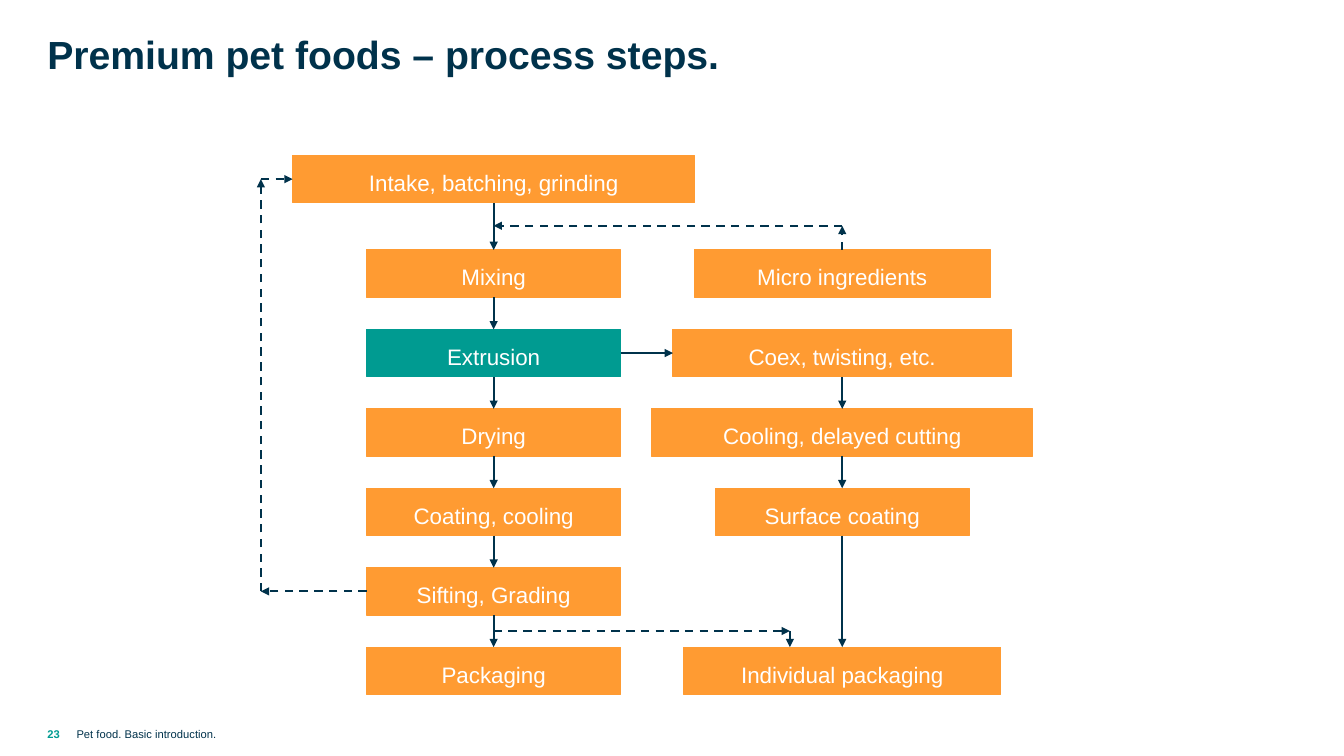
from dataclasses import dataclass
from itertools import pairwise

import pptx
import pptx.dml.color
import pptx.enum.dml
import pptx.enum.shapes
import pptx.enum.text
import pptx.oxml.ns
import pptx.util
from lxml import etree
from pptx.shapes.autoshape import Shape
from pptx.shapes.connector import Connector
from pptx.slide import Slide

COLORS = {"navy": "00324B", "teal": "009B91", "orange": "FF9B32", "white": "FFFFFF"}
FONT = "Arial"

# Grid, in inches: two column centres, equal rows below the intake step
SLIDE_WIDTH, SLIDE_HEIGHT = 13.34, 7.5
MAIN, SIDE = 4.9, 8.36
RETURN_X = 2.59
BRANCH_X = 7.84
FIRST_ROW, ROW_PITCH, BOX_HEIGHT = 2.48, 0.788, 0.47
INTAKE_ROW = -1.19
TOP, LEFT, BOTTOM, RIGHT = range(4)


@dataclass(frozen=True)
class Label:
    text: str
    left: float
    top: float
    width: float
    height: float
    size: float
    color: str
    bold: bool = False
    middle: bool = True


@dataclass(frozen=True)
class Step:
    text: str
    center: float
    row: float
    width: float = 2.52
    color: str = "orange"

    @property
    def top(self) -> float:
        return FIRST_ROW + self.row * ROW_PITCH

    @property
    def middle(self) -> float:
        return self.top + BOX_HEIGHT / 2

    @property
    def left(self) -> float:
        return self.center - self.width / 2


LABELS = [
    Label("23", 0.47, 7.18, 0.36, 0.2, 8, "teal", bold=True),
    Label("Premium pet foods – process steps.", 0.47, 0.3, 12.2, 0.98, 28, "navy",
          bold=True, middle=False),
    Label("Pet food. Basic introduction.", 0.76, 7.18, 8.66, 0.2, 8, "navy"),
]

INTAKE = Step("Intake, batching, grinding", MAIN, INTAKE_ROW, 3.99)
EXTRUSION = Step("Extrusion", MAIN, 1, color="teal")
SIFTING = Step("Sifting, Grading", MAIN, 4)
MICRO = Step("Micro ingredients", SIDE, 0, 2.94)
COEX = Step("Coex, twisting, etc.", SIDE, 1, 3.36)
PACKAGING = Step("Individual packaging", SIDE, 5, 3.15)

MAIN_STEPS = [
    INTAKE,
    Step("Mixing", MAIN, 0),
    EXTRUSION,
    Step("Drying", MAIN, 2),
    Step("Coating, cooling", MAIN, 3),
    SIFTING,
    Step("Packaging", MAIN, 5),
]
SIDE_STEPS = [
    COEX,
    Step("Cooling, delayed cutting", SIDE, 2, 3.78),
    Step("Surface coating", SIDE, 3),
    PACKAGING,
]

# Dashed routes: every leg ends in an arrowhead
MERGE_Y = MICRO.top - 0.24
BRANCH_Y = PACKAGING.top - 0.16
DASHED_ROUTES = [
    [(SIDE, MICRO.top), (SIDE, MERGE_Y), (MAIN, MERGE_Y)],
    [(SIFTING.left, SIFTING.middle), (RETURN_X, SIFTING.middle),
     (RETURN_X, INTAKE.middle), (INTAKE.left, INTAKE.middle)],
    [(MAIN, BRANCH_Y), (BRANCH_X, BRANCH_Y), (BRANCH_X, PACKAGING.top)],
]


def rgb(name: str) -> pptx.dml.color.RGBColor:
    return pptx.dml.color.RGBColor.from_string(COLORS[name])


def write_text(shape: Shape, text: str, size: float, color: str, bold: bool = False) -> None:
    shape.text_frame.text = text
    font = shape.text_frame.paragraphs[0].runs[0].font
    font.name, font.size, font.bold = FONT, pptx.util.Pt(size), bold
    font.color.rgb = rgb(color)


def draw_label(slide: Slide, label: Label) -> None:
    edges = (label.left, label.top, label.width, label.height)
    shape = slide.shapes.add_textbox(*map(pptx.util.Inches, edges))
    write_text(shape, label.text, label.size, label.color, label.bold)
    frame = shape.text_frame
    frame.word_wrap = True
    frame.margin_left = frame.margin_top = frame.margin_right = frame.margin_bottom = 0
    anchor = pptx.enum.text.MSO_ANCHOR
    frame.vertical_anchor = anchor.MIDDLE if label.middle else anchor.TOP


def draw_step(slide: Slide, step: Step) -> Shape:
    edges = (step.left, step.top, step.width, BOX_HEIGHT)
    shape = slide.shapes.add_shape(
        pptx.enum.shapes.MSO_SHAPE.RECTANGLE, *map(pptx.util.Inches, edges))
    shape.shadow.inherit = False
    shape.fill.solid()
    shape.fill.fore_color.rgb = rgb(step.color)
    shape.line.color.rgb = rgb(step.color)
    shape.line.width = pptx.util.Pt(0.75)
    write_text(shape, step.text, 16, "white")
    shape.text_frame.word_wrap = False
    shape.text_frame.vertical_anchor = pptx.enum.text.MSO_ANCHOR.MIDDLE
    paragraph = shape.text_frame.paragraphs[0]
    paragraph.alignment = pptx.enum.text.PP_ALIGN.CENTER
    paragraph.line_spacing = pptx.util.Pt(24)
    return shape


def draw_arrow(slide: Slide, start: tuple[float, float] = (0, 0),
               end: tuple[float, float] = (0, 0), dashed: bool = False) -> Connector:
    arrow = slide.shapes.add_connector(
        pptx.enum.shapes.MSO_CONNECTOR.STRAIGHT, *map(pptx.util.Inches, (*start, *end)))
    arrow.line.color.rgb = rgb("navy")
    arrow.line.width = pptx.util.Pt(1.5)
    if dashed:
        arrow.line.dash_style = pptx.enum.dml.MSO_LINE.DASH
    qualified = pptx.oxml.ns.qn
    properties = arrow.element.spPr
    etree.SubElement(properties.find(qualified("a:ln")), qualified("a:tailEnd"), type="triangle")
    etree.SubElement(properties, qualified("a:effectLst"))
    return arrow


def link_steps(slide: Slide, source: Shape, source_side: int,
               target: Shape, target_side: int) -> None:
    arrow = draw_arrow(slide)
    arrow.begin_connect(source, source_side)
    arrow.end_connect(target, target_side)


def main() -> None:
    presentation = pptx.Presentation()
    presentation.slide_width = pptx.util.Inches(SLIDE_WIDTH)
    presentation.slide_height = pptx.util.Inches(SLIDE_HEIGHT)
    slide = presentation.slides.add_slide(presentation.slide_layouts[6])

    # Title and footer
    for label in LABELS:
        draw_label(slide, label)

    # Process steps
    boxes = {step: draw_step(slide, step) for step in [*MAIN_STEPS, MICRO, *SIDE_STEPS]}

    # Solid arrows down each column, and across to the side line
    for column in (MAIN_STEPS, SIDE_STEPS):
        for upper, lower in pairwise(column):
            link_steps(slide, boxes[upper], BOTTOM, boxes[lower], TOP)
    link_steps(slide, boxes[EXTRUSION], RIGHT, boxes[COEX], LEFT)

    # Dashed arrows
    for route in DASHED_ROUTES:
        for start, end in pairwise(route):
            draw_arrow(slide, start, end, dashed=True)

    presentation.save("out.pptx")


if __name__ == "__main__":
    main()
